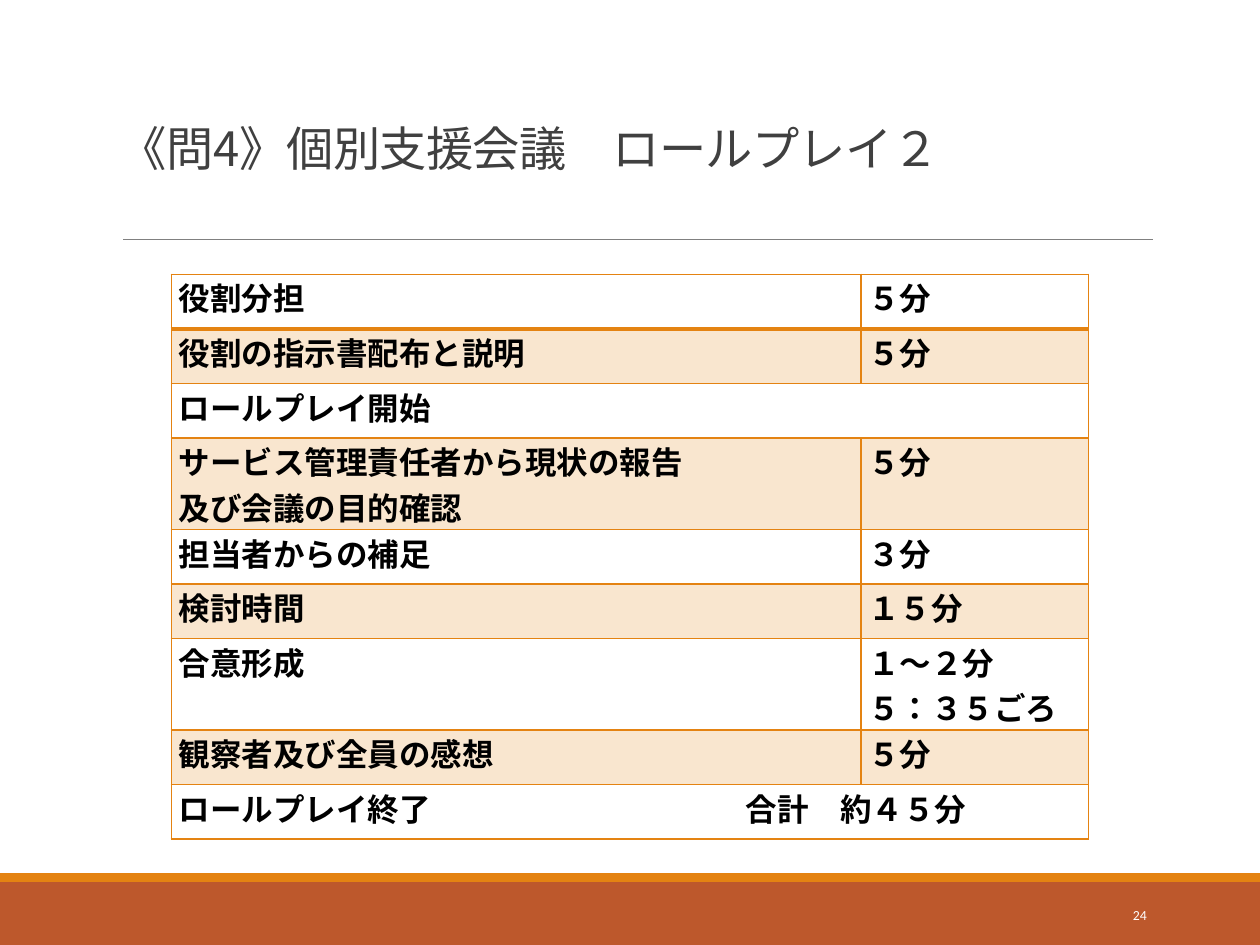
"""Build the timetable slide for the second role play."""
from dataclasses import dataclass

from lxml import etree
from pptx import Presentation, util as u
from pptx.dml import color
from pptx.enum import lang, shapes, text
from pptx.oxml import ns

ROWS = [
    ("役割分担", "５分"),
    ("役割の指示書配布と説明", "５分"),
    ("ロールプレイ開始", None),
    ("サービス管理責任者から現状の報告\n及び会議の目的確認", "５分"),
    ("担当者からの補足", "３分"),
    ("検討時間", "１５分"),
    ("合意形成", "１〜２分\n５：３５ごろ"),
    ("観察者及び全員の感想", "５分"),
    ("ロールプレイ終了\t合計　約４５分", None),
]


def paint(target, tone):
    target.rgb = color.RGBColor.from_string(tone)


def add(node, tag, **attrs):
    return etree.SubElement(node, ns.qn(tag), attrs)


def write(frame, words, size=18, font="Noto Sans CJK JP", tone="000000",
          bold=False, align=text.PP_ALIGN.LEFT, space=None, tab=None):
    for num, line in enumerate(words.split("\n")):
        para = frame.add_paragraph() if num else frame.paragraphs[0]
        para.alignment = align
        if tab and "\t" in line:
            stops = add(para._p.get_or_add_pPr(), "a:tabLst")
            add(stops, "a:tab", pos=str(u.Pt(tab)), algn="l")
        run = para.add_run()
        run.text = line
        run.font.size = u.Pt(size)
        run.font.name = font
        run.font.bold = bold
        run.font.language_id = lang.MSO_LANGUAGE_ID.JAPANESE
        paint(run.font.color, tone)
        props = run._r.get_or_add_rPr()
        add(props, "a:ea", typeface=font)
        if space:
            props.set("spc", str(round(space * 100)))


@dataclass
class Deck:
    """Holds the style and the current slide."""
    slide: object
    main: str = "E48312"
    dark: str = "BD582C"
    rule: str = "808080"

    def bar(self, top, height, tone):
        shape = self.slide.shapes.add_shape(
            shapes.MSO_SHAPE.RECTANGLE, 0, u.Pt(top), u.Pt(720), u.Pt(height))
        shape.shadow.inherit = False
        shape.fill.solid()
        paint(shape.fill.fore_color, tone)
        shape.line.fill.background()

    def line(self, left, right, top):
        link = self.slide.shapes.add_connector(
            shapes.MSO_CONNECTOR.STRAIGHT, u.Pt(left), u.Pt(top), u.Pt(right), u.Pt(top))
        link.line.width = u.Pt(0.5)
        paint(link.line.color, self.rule)
        add(link._element.spPr, "a:effectLst")

    def label(self, words, box, anchor, inset, **style):
        frame = self.slide.shapes.add_textbox(*map(u.Pt, box)).text_frame
        frame.word_wrap = True
        frame.vertical_anchor = anchor
        frame.margin_left = u.Pt(inset)
        frame.margin_top = frame.margin_bottom = 0
        write(frame, words, **style)

    def edge(self, cell, side, width):
        line = add(cell._tc.get_or_add_tcPr(), "a:ln" + side, w=str(u.Pt(width)))
        add(add(line, "a:solidFill"), "a:srgbClr", val=self.main)

    def cell(self, cell, words, row):
        cell.margin_left = cell.margin_right = u.Pt(4.3)
        cell.margin_top = cell.margin_bottom = 0
        for side in "LRTB":
            heavy = (row, side) in ((0, "B"), (1, "T"))
            self.edge(cell, side, 2 if heavy else 1)
        if row % 2:
            cell.fill.solid()
            paint(cell.fill.fore_color, self.main)
            shade = cell._tc.tcPr.find(ns.qn("a:solidFill"))
            add(shade[0], "a:alpha", val="20000")
        else:
            cell.fill.background()
        if words:
            write(cell.text_frame, words, bold=True,
                  align=text.PP_ALIGN.JUSTIFY, tab=324)

    def table(self, rows, left, top, widths):
        heights = [52.2 if any("\n" in (item or "") for item in row) else 31.2
                   for row in rows]
        grid = self.slide.shapes.add_table(
            len(rows), len(widths), u.Pt(left), u.Pt(top),
            u.Pt(sum(widths)), u.Pt(sum(heights))).table
        grid.first_row = grid.horz_banding = False
        for col, width in zip(grid.columns, widths):
            col.width = u.Pt(width)
        for num, (row, height) in enumerate(zip(rows, heights)):
            grid.rows[num].height = u.Pt(height)
            for col, words in enumerate(row):
                self.cell(grid.cell(num, col), words, num)
            if row[1] is None:
                grid.cell(num, 0).merge(grid.cell(num, 1))


def main():
    show = Presentation()
    show.slide_width, show.slide_height = u.Pt(720), u.Pt(540)
    deck = Deck(show.slides.add_slide(show.slide_layouts[6]))
    deck.bar(504, 36, deck.dark)
    deck.bar(499, 5, deck.main)
    deck.line(70.5, 659, 136.8)
    deck.label("《問4》個別支援会議　ロールプレイ２", (55.5, 48, 609, 52.5),
               text.MSO_ANCHOR.BOTTOM, 13, size=27, tone="404040", space=-0.4)
    deck.table(ROWS, 98, 156.8, (394, 130))
    deck.label("24", (584.5, 508.5, 78, 29), text.MSO_ANCHOR.MIDDLE, 7.2,
               size=7.9, font="Calibri", tone="FFFFFF", align=text.PP_ALIGN.RIGHT)
    show.save("out.pptx")


if __name__ == "__main__":
    main()
